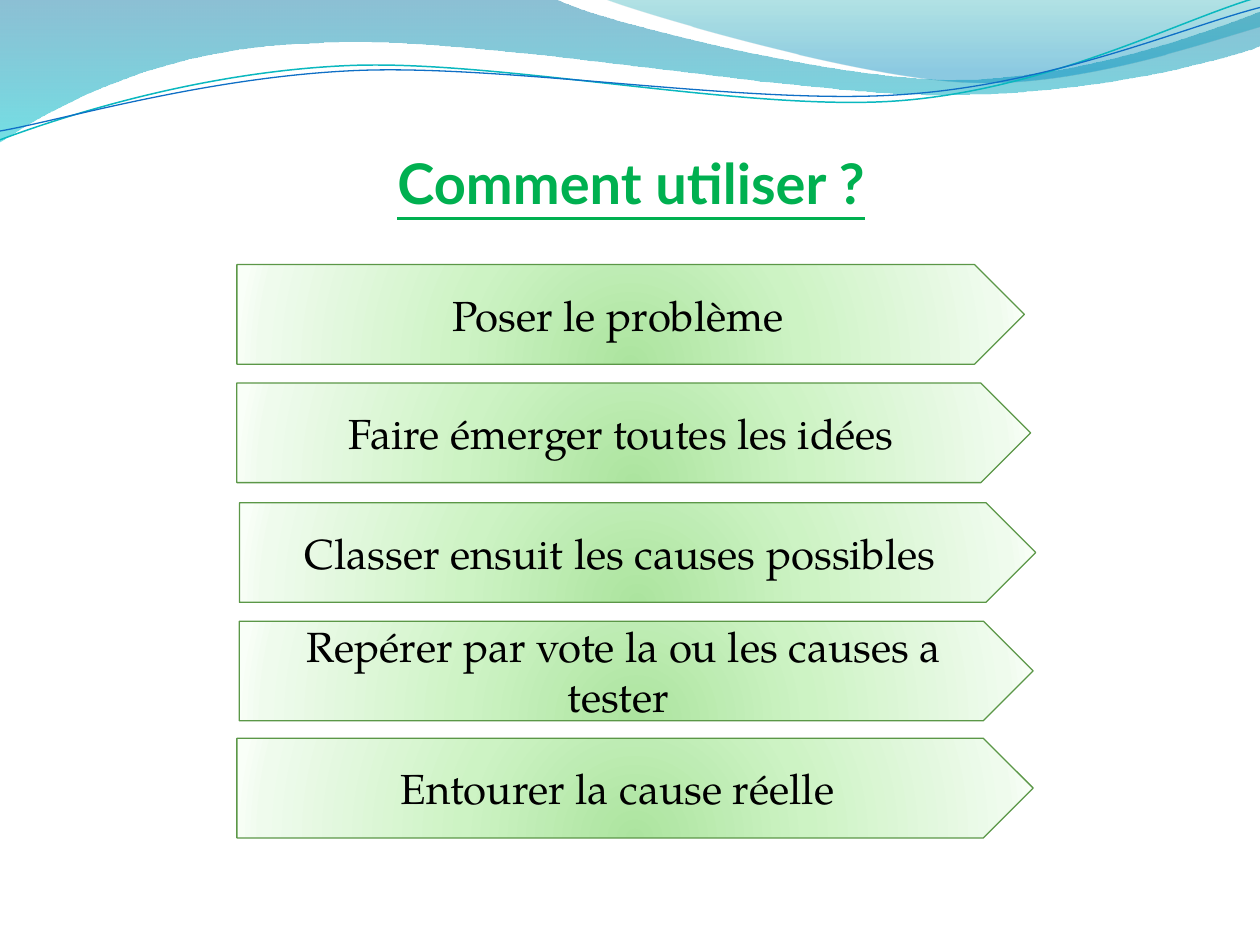
from math import cos, radians, sin

from pptx import Presentation
from pptx.dml.color import RGBColor
from pptx.enum.shapes import MSO_SHAPE
from pptx.enum.text import MSO_ANCHOR, MSO_AUTO_SIZE, PP_ALIGN
from pptx.oxml import parse_xml
from pptx.oxml.ns import nsdecls, qn
from pptx.util import Inches, Pt

PENTAGON = MSO_SHAPE.PENTAGON
MIDDLE, BOTTOM = MSO_ANCHOR.MIDDLE, MSO_ANCHOR.BOTTOM
CENTER = PP_ALIGN.CENTER
NO_AUTOFIT = MSO_AUTO_SIZE.NONE

TITLE = "Comment utiliser ?"
STEPS = [
    ("Poser le problème", 1.88, 2.1, 6.25),
    ("Faire émerger toutes les idées", 1.88, 3.04, 6.3),
    ("Classer ensuit les causes possibles ", 1.9, 3.99, 6.32),
    ("Repérer par vote la ou les causes a tester ", 1.9, 4.93, 6.3),
    ("Entourer la cause réelle ", 1.88, 5.86, 6.32),
]
STEP_HEIGHT = 0.79

STEP_STOPS = [(0, "ACE49F", 100), (43, "CDF3C4", 100), (93, "EFFBED", 100), (100, "F9FFF8", 100)]
STEP_GLOW = ('<a:path path="circle"><a:fillToRect l="50000" t="130000" '
             'r="50000" b="-30000"/></a:path>')
DOWNWARD = '<a:lin ang="5400000" scaled="0"/>'

WAVE_BANDS = [
    ((0, 0),
     [[(4.4, -0.01)],
      [(4.76, 0.17), (6.64, 0.63), (7.58, 0.63)],
      [(8.53, 0.63), (9.58, 0.26), (10, 0.09)],
      [(10.01, 0.36)],
      [(9.83, 0.44), (8.7, 0.76), (7.46, 0.75)],
      [(6.22, 0.75), (3.82, 0.28), (2.57, 0.34)],
      [(1.29, 0.36), (0.46, 0.83), (-0.01, 1.13)],
      [(0, 0)]],
     [(0, "0074A1", 45), (100, "00C6CF", 55)]),
    ((4.79, -0.01),
     [[(5.09, 0.11), (6.82, 0.62), (7.69, 0.65)],
      [(8.56, 0.69), (9.61, 0.32), (10, 0.21)],
      [(10, 0)],
      [(4.79, -0.01)]],
     [(0, "00A1A9", 30), (80, "008BBF", 45)]),
]
WAVE_LINES = [
    ((0, 1.11),
     [[(0.48, 0.93), (1.58, 0.57), (2.77, 0.52)],
      [(3.95, 0.47), (5.93, 0.89), (7.13, 0.8)],
      [(8.33, 0.71), (9.38, 0.15), (9.98, -0.02)]],
     (4.99, 0.58), "0AB8BF", 0.85),
    ((0, 1.04),
     [[(0.47, 0.96), (1.64, 0.61), (2.83, 0.56)],
      [(4.03, 0.51), (5.97, 0.84), (7.17, 0.75)],
      [(8.36, 0.67), (9.41, 0.21), (10, 0.06)]],
     (5, 0.59), "0F6FC6", 0.75),
]
LINE_TILT = -2.7


def color(value):
    return RGBColor.from_string(value)


def write(shape, text, font, size, ink, anchor, bold=False, underline=False):
    frame = shape.text_frame
    frame.word_wrap = True
    frame.auto_size = NO_AUTOFIT
    frame.vertical_anchor = anchor
    paragraph = frame.paragraphs[0]
    paragraph.alignment = CENTER
    run = paragraph.add_run()
    run.text = text
    run.font.name = font
    run.font.size = Pt(size)
    run.font.bold = bold
    run.font.underline = underline
    run.font.color.rgb = color(ink)


def fill_gradient(shape, stops, direction):
    shape.fill.background()
    properties = shape._element.spPr
    marks = "".join(
        f'<a:gs pos="{position * 1000}"><a:srgbClr val="{value}">'
        f'<a:alpha val="{opacity * 1000}"/></a:srgbClr></a:gs>'
        for position, value, opacity in stops)
    gradient = parse_xml(
        f'<a:gradFill {nsdecls("a")} rotWithShape="1">'
        f'<a:gsLst>{marks}</a:gsLst>{direction}</a:gradFill>')
    properties.replace(properties.find(qn("a:noFill")), gradient)


def outline(shape, value, width):
    shape.line.color.rgb = color(value)
    shape.line.width = Pt(width)


def turn(point, center, degrees):
    angle = radians(degrees)
    x, y = point[0] - center[0], point[1] - center[1]
    return (center[0] + x * cos(angle) - y * sin(angle),
            center[1] + x * sin(angle) + y * cos(angle))


def add_wave(slide, start, segments, close):
    points = [(Inches(x), Inches(y)) for segment in segments for x, y in segment]
    builder = slide.shapes.build_freeform(Inches(start[0]), Inches(start[1]))
    builder.add_line_segments(points, close=close)
    wave = builder.convert_to_shape()
    wave.shadow.inherit = False
    legs = iter(list(wave._element.iter(qn("a:lnTo"))))
    for segment in segments:
        first, *others = [next(legs) for _ in segment]
        if others:
            curve = parse_xml(f'<a:cubicBezTo {nsdecls("a")}/>')
            first.addprevious(curve)
            for leg in (first, *others):
                curve.append(leg[0])
                leg.getparent().remove(leg)
    return wave


def main():
    deck = Presentation()
    deck.slide_width, deck.slide_height = Inches(10), Inches(7.5)
    slide = deck.slides.add_slide(deck.slide_layouts[5])

    for start, segments, stops in WAVE_BANDS:
        band = add_wave(slide, start, segments, True)
        fill_gradient(band, stops, DOWNWARD)
        band.line.fill.background()
    for start, segments, center, ink, width in WAVE_LINES:
        level = [[turn(point, center, -LINE_TILT) for point in segment] for segment in segments]
        strand = add_wave(slide, turn(start, center, -LINE_TILT), level, False)
        strand.rotation = LINE_TILT
        strand.fill.background()
        outline(strand, ink, width)

    title = slide.shapes.title
    title.left, title.top = Inches(0.51), Inches(0.84)
    title.width, title.height = Inches(9), Inches(0.87)
    write(title, TITLE, "Lato", 32, "00B050", BOTTOM, bold=True, underline=True)
    frame = title.text_frame
    frame.margin_left = frame.margin_right = frame.margin_bottom = 0

    for text, left, top, width in STEPS:
        step = slide.shapes.add_shape(
            PENTAGON, Inches(left), Inches(top), Inches(width), Inches(STEP_HEIGHT))
        step.shadow.inherit = False
        fill_gradient(step, STEP_STOPS, STEP_GLOW)
        outline(step, "5B9747", 0.75)
        write(step, text, "TeX Gyre Pagella", 24, "000000", MIDDLE)

    deck.save("out.pptx")


if __name__ == "__main__":
    main()
